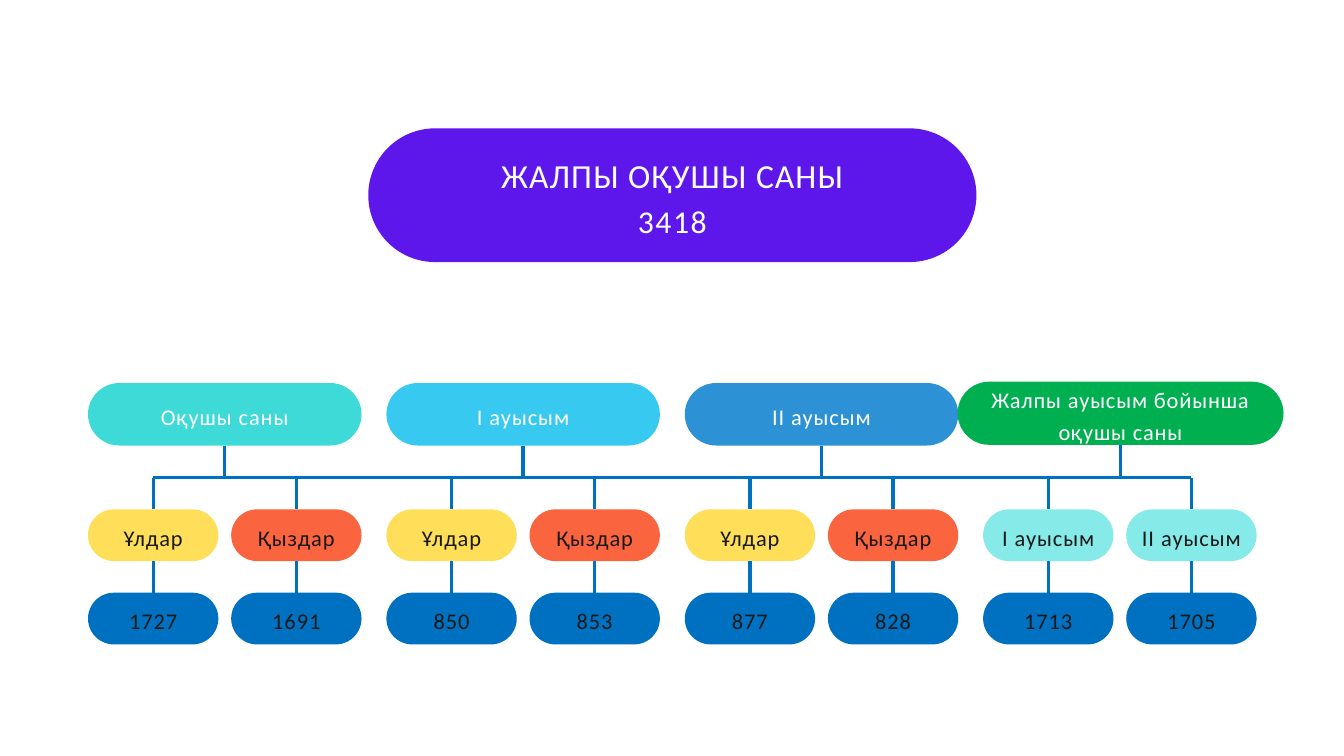
from lxml import etree
from pptx import Presentation
from pptx import util as u
from pptx.dml.color import RGBColor
from pptx.enum import shapes, text
from pptx.oxml.ns import qn

COLORS = {
    "white": "FFFFFF", "ink": "191919", "violet": "5E17EB", "blue": "0070C0",
    "teal": "3EDAD8", "sky": "37C9EF", "azure": "2C92D5", "green": "00B050",
    "yellow": "FFDE59", "orange": "FA643F", "mint": "86EAE9",
}
BOYS_GIRLS = [("Ұлдар", "yellow"), ("Қыздар", "orange")]
SHIFTS = [("І ауысым", "mint"), ("ІІ ауысым", "mint")]
GROUPS = [
    ("Оқушы саны", "teal", BOYS_GIRLS, (1727, 1691)),
    ("І ауысым", "sky", BOYS_GIRLS, (850, 853)),
    ("ІІ ауысым", "azure", BOYS_GIRLS, (877, 828)),
    ("Жалпы ауысым бойынша оқушы саны", "green", SHIFTS, (1713, 1705)),
]
HEAD_BOXES = [(1.31 + 4.44 * i, 5.7, 4.07, 0.93) for i in range(3)]
HEAD_BOXES.append((14.25, 5.68, 4.85, 0.94))
LEFT, PITCH = 1.31, 4.44
LEAF_W, LEAF_H, LEAF_STEP = 1.94, 0.77, 2.13
LABEL_TOP, COUNT_TOP, BUS_Y = 7.58, 8.82, 7.11


def rgb(name):
    """Return the named colour."""
    return RGBColor.from_string(COLORS[name])


def add_pill(s, box, fill, lines, color="white"):
    """Add a pill; each line is (text, size, line spacing, letter spacing)."""
    sp = s.shapes.add_shape(shapes.MSO_SHAPE.ROUNDED_RECTANGLE, *map(u.Inches, box))
    sp.adjustments[0] = 0.5
    sp.shadow.inherit = False
    sp.fill.solid()
    sp.fill.fore_color.rgb = rgb(fill)
    sp.line.fill.background()
    tf = sp.text_frame
    tf.word_wrap = True
    tf.vertical_anchor = text.MSO_ANCHOR.MIDDLE
    tf.margin_left = tf.margin_right = tf.margin_top = tf.margin_bottom = 0
    tf.text = "\n".join(line[0] for line in lines)
    for p, (_, size, leading, tracking) in zip(tf.paragraphs, lines):
        p.alignment = text.PP_ALIGN.CENTER
        p.line_spacing = u.Pt(leading)
        r = p.runs[0]
        r.font.name = "Calibri"
        r.font.size = u.Pt(size)
        r.font.color.rgb = rgb(color)
        r._r.get_or_add_rPr().set("spc", str(round(tracking * 100)))
    return sp


def add_line(s, x1, y1, x2, y2, width=3.6, start=None, end=None):
    """Add a straight line, joined to the bottom of start and the top of end."""
    c = s.shapes.add_connector(
        shapes.MSO_CONNECTOR.STRAIGHT, *map(u.Inches, (x1, y1, x2, y2)))
    c.line.color.rgb = rgb("blue")
    c.line.width = u.Pt(width)
    etree.SubElement(c._element.spPr, qn("a:effectLst"))
    if start is not None:
        c.begin_connect(start, 2)
    if end is not None:
        c.end_connect(end, 0)


def add_total(s, box):
    """Add the large pill with the total."""
    add_pill(s, box, "violet", [("ЖАЛПЫ ОҚУШЫ САНЫ", 36, 47.2, 1.1),
                                ("3418", 34, 47.6, 1.7)])


def add_group(s, left, head_box, title, fill, labels, counts):
    """Add a group heading with its two label and count columns."""
    tracking = 0.9 if fill == "green" else 1
    head = add_pill(s, head_box, fill, [(title, 24, 33.6, tracking)])
    x, y, w, h = head_box
    add_line(s, x + w / 2, y + h, x + w / 2, BUS_Y, start=head)
    for i, ((label, color), count) in enumerate(zip(labels, counts)):
        x = left + i * LEAF_STEP
        mid = x + LEAF_W / 2
        top = add_pill(s, (x, LABEL_TOP, LEAF_W, LEAF_H), color,
                       [(label, 24, 33.6, 1)], "ink")
        low = add_pill(s, (x, COUNT_TOP, LEAF_W, LEAF_H), "blue",
                       [(str(count), 24, 33.6, 1)], "ink")
        add_line(s, mid, BUS_Y, mid, LABEL_TOP, end=top)
        add_line(s, mid, LABEL_TOP + LEAF_H, mid, COUNT_TOP, start=top, end=low)


def main():
    """Build and save the slide."""
    prs = Presentation()
    prs.slide_width, prs.slide_height = u.Inches(20), u.Inches(11.25)
    s = prs.slides.add_slide(prs.slide_layouts[6])
    add_total(s, (5.48, 1.91, 9.05, 1.99))
    for i, (head_box, group) in enumerate(zip(HEAD_BOXES, GROUPS)):
        add_group(s, LEFT + i * PITCH, head_box, *group)
    add_line(s, 2.28, BUS_Y, 17.72, BUS_Y, width=3)
    prs.save("out.pptx")


if __name__ == "__main__":
    main()
